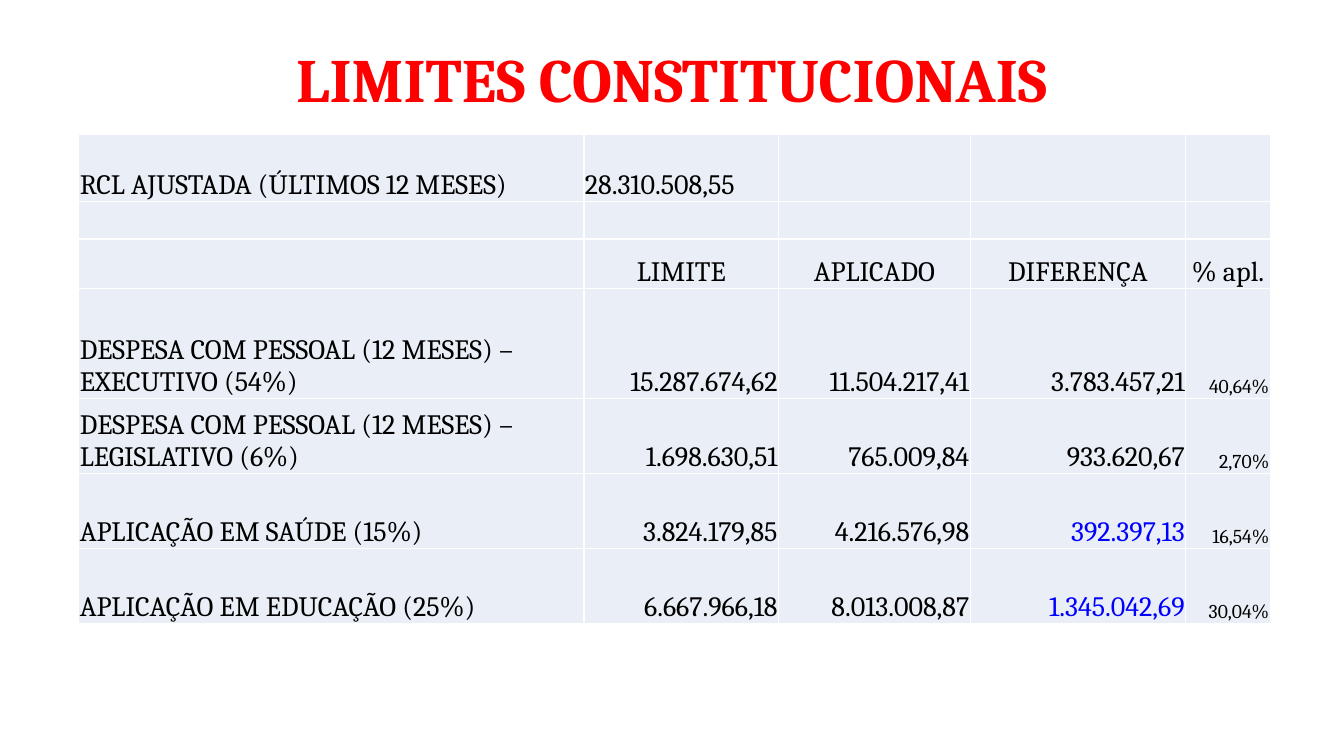
from lxml.etree import SubElement
from pptx import Presentation
from pptx.dml.color import RGBColor
from pptx.enum.text import MSO_ANCHOR, PP_ALIGN
from pptx.oxml.ns import qn
from pptx.util import Pt

TITLE = "LIMITES CONSTITUCIONAIS"
ROWS = [
    ("RCL AJUSTADA (ÚLTIMOS 12 MESES)", "28.310.508,55", "", "", ""),
    ("", "", "", "", ""),
    ("", " LIMITE ", "APLICADO", "DIFERENÇA", "% apl."),
    ("DESPESA COM PESSOAL (12 MESES) – EXECUTIVO (54%)",
     "15.287.674,62", "11.504.217,41", "3.783.457,21", "40,64%"),
    ("DESPESA COM PESSOAL (12 MESES) – LEGISLATIVO (6%)",
     "1.698.630,51", "765.009,84", "933.620,67", "2,70%"),
    ("APLICAÇÃO EM SAÚDE (15%)",
     "3.824.179,85", "4.216.576,98", "392.397,13", "16,54%"),
    ("APLICAÇÃO EM EDUCAÇÃO (25%)",
     "6.667.966,18", "8.013.008,87", "1.345.042,69", "30,04%"),
]
COLUMN_WIDTHS = [360.9, 139, 136.9, 154, 60.3]
ROW_HEIGHTS = [48, 26.7, 35.2, 78.9, 53.5, 53.5, 53.5]
HEADER_ROW = 2
SURPLUS_ROWS = (5, 6)
DIFFERENCE_COLUMN, PERCENT_COLUMN = 3, 4
COLORS = {"title": "FF0000", "text": "000000", "surplus": "0000FF",
          "cell": "EAEFF7", "border": "FFFFFF"}
TITLE_FRAME = {"word_wrap": True, "vertical_anchor": MSO_ANCHOR.MIDDLE}
CELL_FORMAT = {"vertical_anchor": MSO_ANCHOR.BOTTOM, "margin_left": Pt(0.7),
               "margin_right": Pt(0.7), "margin_top": Pt(0.7), "margin_bottom": 0}


def set_attributes(target, values):
    for name, value in values.items():
        setattr(target, name, value)


def write(paragraph, text, size, color, alignment, bold=False):
    paragraph.alignment = alignment
    run = paragraph.add_run()
    run.text = text
    set_attributes(run.font, {"name": "Cambria", "size": Pt(size), "bold": bold})
    run.font.color.rgb = RGBColor.from_string(COLORS[color])


def add_borders(cell):
    properties = cell._tc.get_or_add_tcPr()
    for side in ("lnL", "lnR", "lnT", "lnB"):
        line = SubElement(properties, qn(f"a:{side}"), w=str(Pt(1)))
        fill = SubElement(line, qn("a:solidFill"))
        SubElement(fill, qn("a:srgbClr"), val=COLORS["border"])


def cell_alignment(row, column):
    if row == HEADER_ROW:
        return PP_ALIGN.CENTER
    if row > HEADER_ROW and column > 0:
        return PP_ALIGN.RIGHT
    return PP_ALIGN.LEFT


def fill_cell(cell, row, column, text):
    set_attributes(cell, CELL_FORMAT)
    add_borders(cell)
    cell.fill.solid()
    cell.fill.fore_color.rgb = RGBColor.from_string(COLORS["cell"])
    if text:
        size = 14 if column == PERCENT_COLUMN and row > HEADER_ROW else 20
        surplus = row in SURPLUS_ROWS and column == DIFFERENCE_COLUMN
        write(cell.text_frame.paragraphs[0], text, size,
              "surplus" if surplus else "text", cell_alignment(row, column))


def main():
    presentation = Presentation()
    set_attributes(presentation, {"slide_width": Pt(960), "slide_height": Pt(540)})
    slide = presentation.slides.add_slide(presentation.slide_layouts[6])

    title = slide.shapes.add_textbox(Pt(66), Pt(28.8), Pt(828), Pt(59.8))
    set_attributes(title.text_frame, TITLE_FRAME)
    paragraph = title.text_frame.paragraphs[0]
    paragraph.line_spacing = 0.9
    write(paragraph, TITLE, 44, "title", PP_ALIGN.CENTER, bold=True)

    table = slide.shapes.add_table(
        len(ROWS), len(COLUMN_WIDTHS), Pt(56.3), Pt(96),
        Pt(sum(COLUMN_WIDTHS)), Pt(sum(ROW_HEIGHTS))).table
    set_attributes(table, {"first_row": False, "horz_banding": False})
    for column, width in zip(table.columns, COLUMN_WIDTHS):
        column.width = Pt(width)
    for row, height in zip(table.rows, ROW_HEIGHTS):
        row.height = Pt(height)
    for row, texts in enumerate(ROWS):
        for column, text in enumerate(texts):
            fill_cell(table.cell(row, column), row, column, text)

    presentation.save("out.pptx")


if __name__ == "__main__":
    main()
